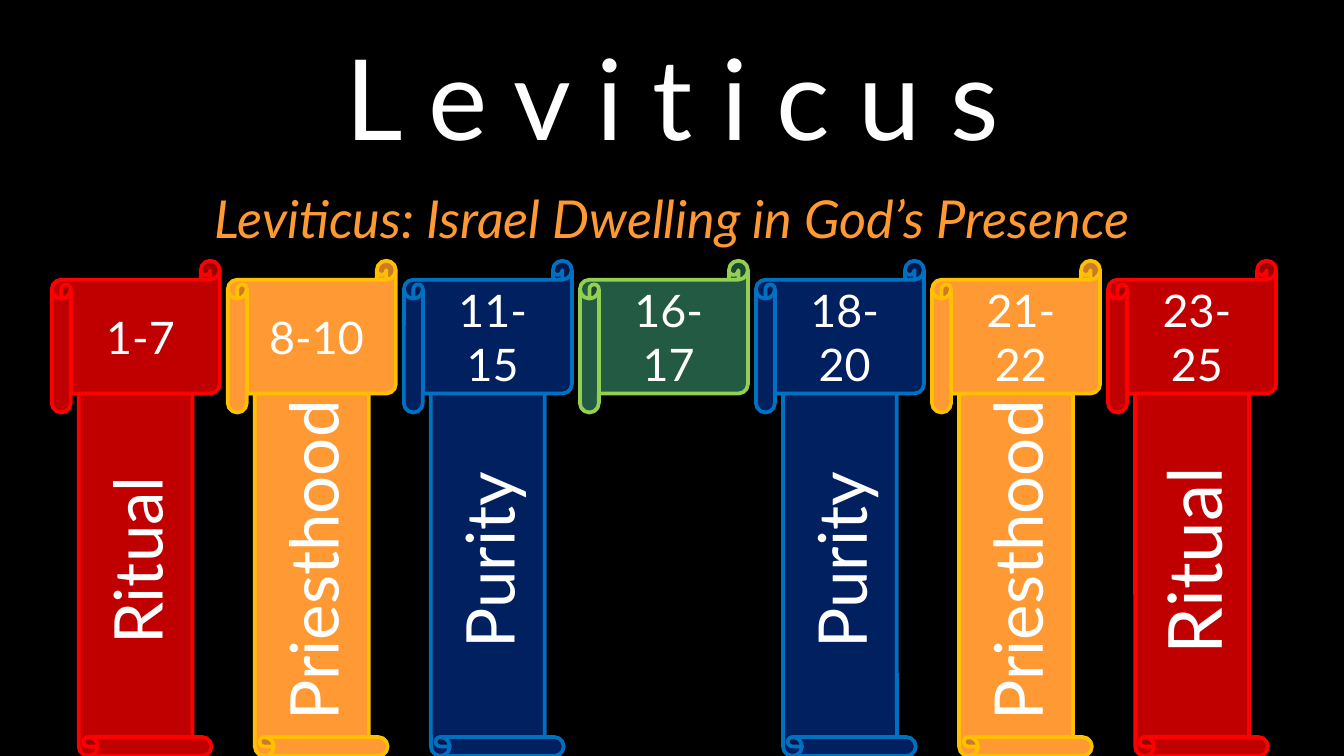
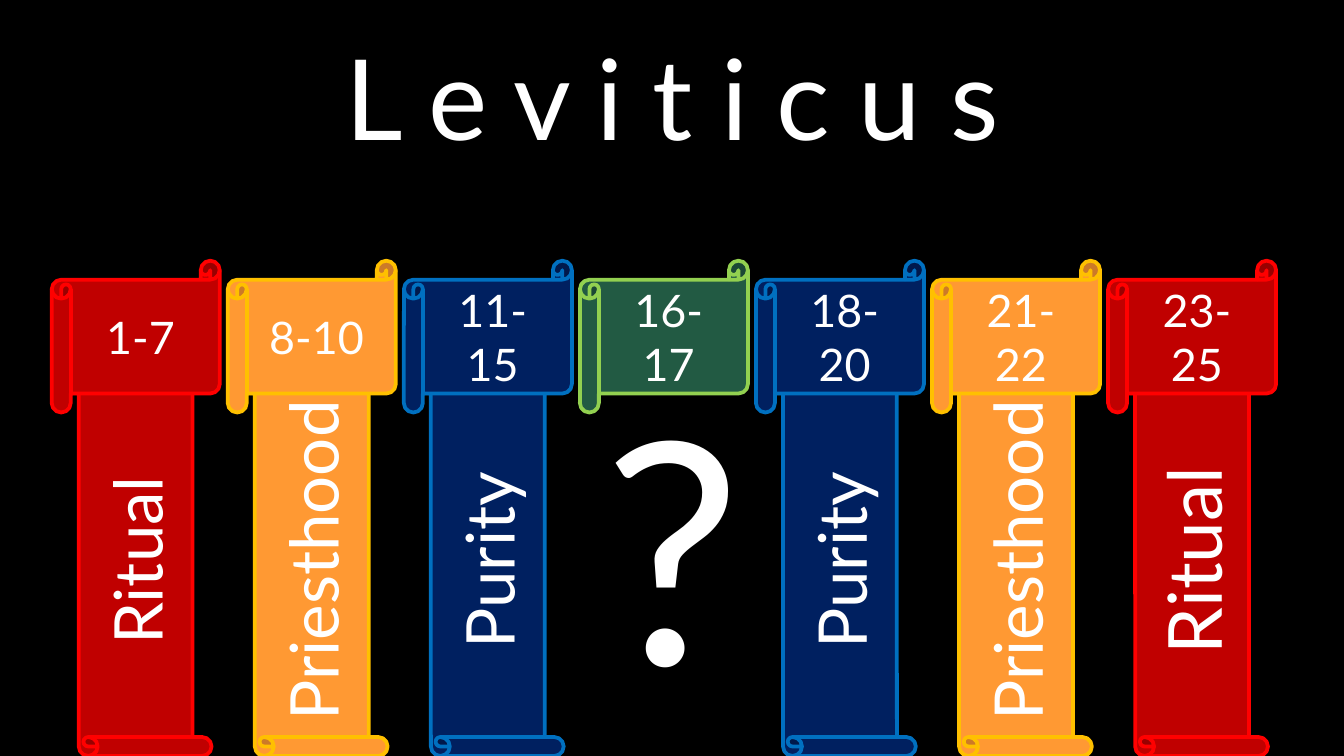
from pptx import Presentation
from pptx.dml.color import RGBColor
from pptx.enum.shapes import MSO_SHAPE
from pptx.enum.text import MSO_ANCHOR, PP_ALIGN
from pptx.util import Inches, Pt

SCROLL = MSO_SHAPE.HORIZONTAL_SCROLL
MIDDLE, TOP = MSO_ANCHOR.MIDDLE, MSO_ANCHOR.TOP
CENTER = PP_ALIGN.CENTER

FONT = "Lato"
COLORS = {
    "background": "000000",
    "text": "FFFFFF",
    "subtitle": "FF9933",
}
THEMES = {
    "ritual": ("C00000", "FF0000"),
    "priesthood": ("FF9933", "FFC000"),
    "purity": ("002060", "0070C0"),
    "atonement": ("225A43", "92D050"),
}

TITLE = "L e v i t i c u s"
SUBTITLE = "Leviticus: Israel Dwelling in God’s Presence"
QUESTION = "?"
SECTIONS = [
    ("1-7", "ritual", "Ritual", 36),
    ("8-10", "priesthood", "Priesthood", 36),
    ("11-15", "purity", "Purity", 36),
    ("16-17", "atonement", None, None),
    ("18-20", "purity", "Purity", 36),
    ("21-22", "priesthood", "Priesthood", 36),
    ("23-25", "ritual", "Ritual", 40),
]

SLIDE_W = 10
SLIDE_H = SLIDE_W * 9 / 16
TITLE_BOX = (0.51, 0.28, 8.98, 0.86)
SUBTITLE_BOX = (0.51, 1.34, 8.98, 0.6)
QUESTION_BOX = (4.18, 2.6, 1.65, 2.89)
FIRST_CENTER, LAST_CENTER = 1.01, 8.87
COLUMN_STEP = (LAST_CENTER - FIRST_CENTER) / (len(SECTIONS) - 1)
HEAD_W, HEAD_TOP = 1.25, 1.94
PILLAR_LENGTH, PILLAR_TOP = 2.84, 3.64
SCROLL_H = 1.13


def color(value):
    return RGBColor.from_string(value)


def place(part, box):
    part.left, part.top, part.width, part.height = map(Inches, box)


def write(part, text, size, shade=COLORS["text"], italic=None, anchor=MIDDLE):
    frame = part.text_frame
    frame.word_wrap = True
    frame.vertical_anchor = anchor
    line = frame.paragraphs[0]
    line.alignment = CENTER
    run = line.add_run()
    run.text = text
    run.font.name = FONT
    run.font.size = Pt(size)
    run.font.italic = italic
    run.font.color.rgb = color(shade)


def add_scroll(slide, center, top, width, theme, text, size, rotation=0):
    box = (center - width / 2, top, width, SCROLL_H)
    scroll = slide.shapes.add_shape(SCROLL, *map(Inches, box))
    scroll.rotation = rotation
    scroll.shadow.inherit = False
    fill, outline = THEMES[theme]
    scroll.fill.solid()
    scroll.fill.fore_color.rgb = color(fill)
    scroll.line.color.rgb = color(outline)
    scroll.line.width = Pt(2)
    write(scroll, text, size)


def add_caption(slide, box, text, size, **style):
    caption = slide.shapes.add_textbox(*map(Inches, box))
    write(caption, text, size, anchor=TOP, **style)


def add_leviticus_slide(deck):
    slide = deck.slides.add_slide(deck.slide_layouts[5])
    slide.background.fill.solid()
    slide.background.fill.fore_color.rgb = color(COLORS["background"])
    place(slide.shapes.title, TITLE_BOX)
    write(slide.shapes.title, TITLE, 60)
    columns = [(FIRST_CENTER + i * COLUMN_STEP, *section)
               for i, section in enumerate(SECTIONS)]
    for center, _, theme, topic, size in columns:
        if topic:
            add_scroll(slide, center, PILLAR_TOP, PILLAR_LENGTH, theme,
                       topic, size, rotation=270)
    for center, chapters, theme, _, _ in columns:
        add_scroll(slide, center, HEAD_TOP, HEAD_W, theme, chapters, 24)
    return slide


def main():
    deck = Presentation()
    deck.slide_width, deck.slide_height = Inches(SLIDE_W), Inches(SLIDE_H)
    overview = add_leviticus_slide(deck)
    add_caption(overview, SUBTITLE_BOX, SUBTITLE, 28,
                shade=COLORS["subtitle"], italic=True)
    puzzle = add_leviticus_slide(deck)
    add_caption(puzzle, QUESTION_BOX, QUESTION, 166)
    deck.save("out.pptx")


if __name__ == "__main__":
    main()
